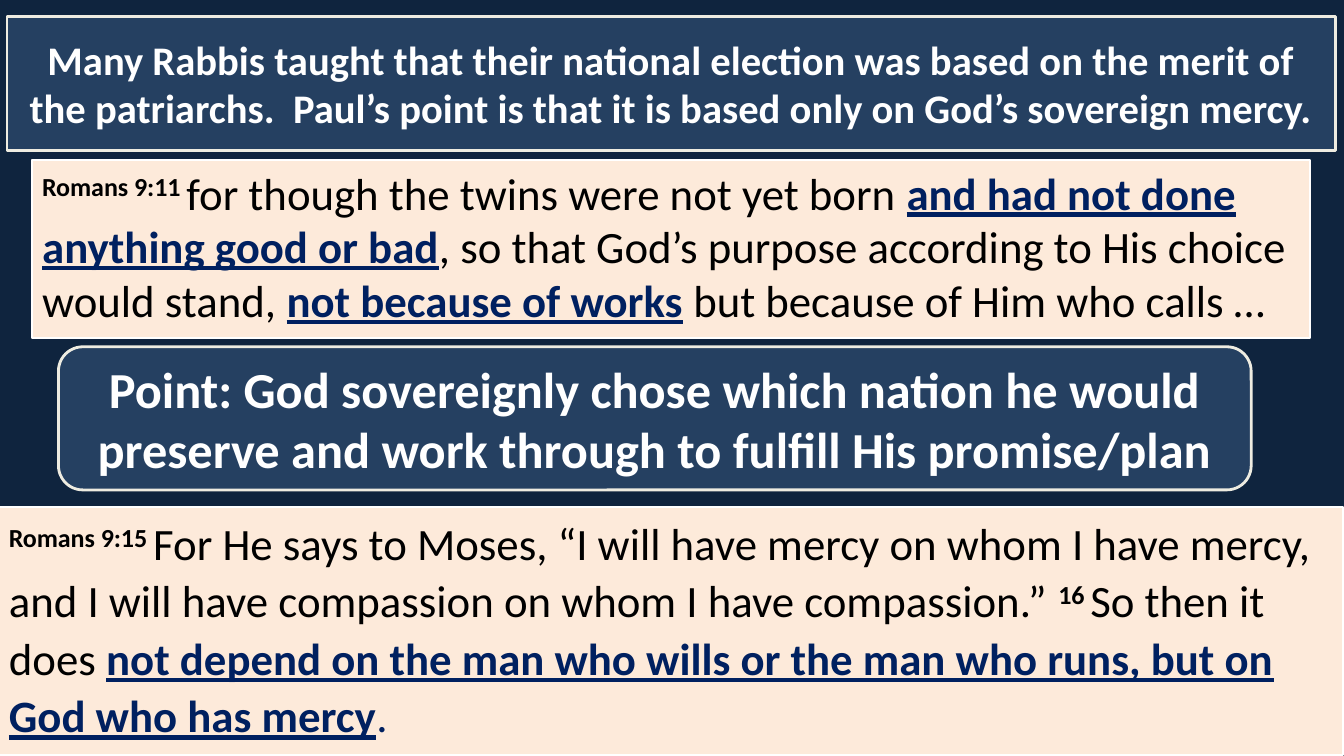
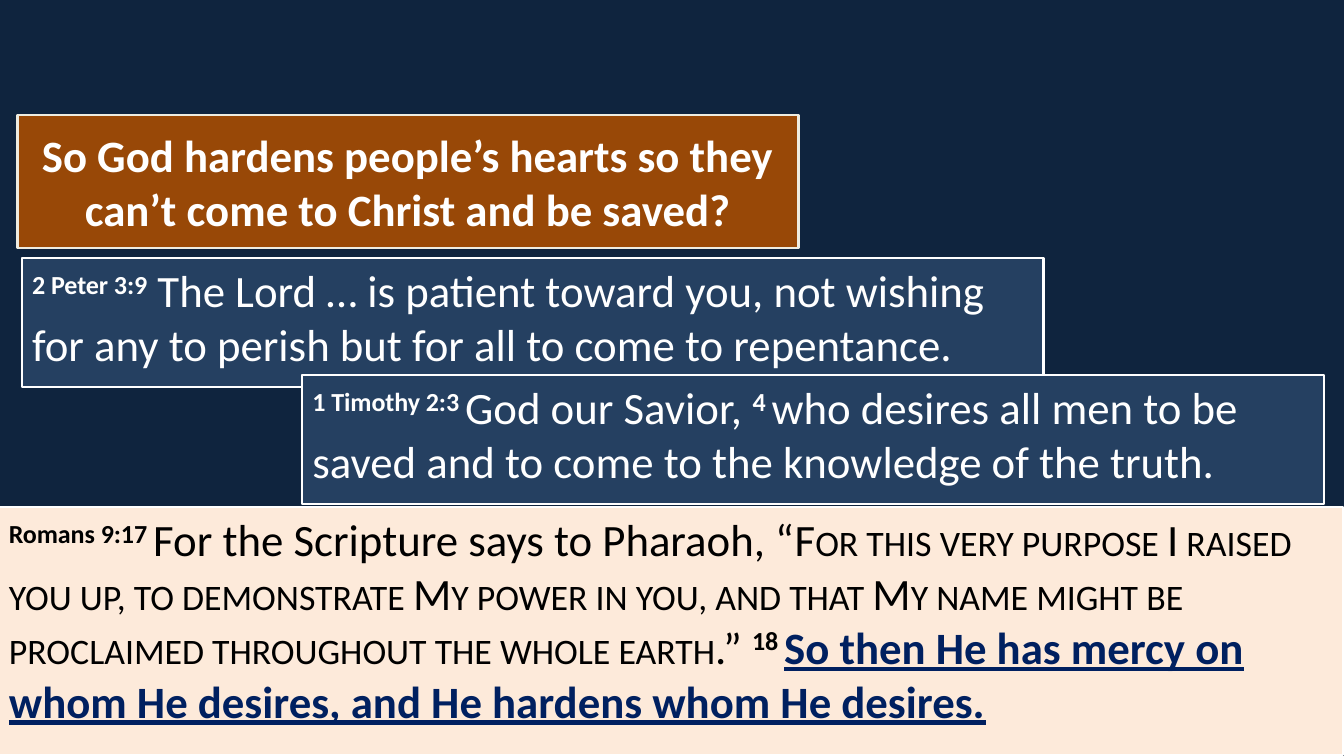
import pptx
import pptx.util
import pptx.dml.color
import pptx.enum.shapes
import pptx.enum.text
import pptx.oxml
import pptx.oxml.ns

COLORS = {
    "night": "0F243E", "navy": "254061", "rust": "984807", "peach": "FDEADA",
    "cream": "EEECE1", "white": "FFFFFF", "black": "000000", "stress": "002060",
}
FONT = "Calibri"
WIDTH, HEIGHT = 13.33, 7.5
VERSE_SIZE = 32
PASSAGE_BAND = (-0.01, 5.03, WIDTH, 2.46)
CALLOUT_GUIDES = {"adj1": -0.22, "adj2": 0.5, "adj3": 0.17}

SLIDES = [
    {
        "headline": {
            "box": (0.07, 0.16, 13.18, 1.33), "fill": "navy", "size": 29,
            "text": "Many Rabbis taught that their national election was based on the merit of "
                    "the patriarchs.  Paul’s point is that it is based only on God’s sovereign mercy.",
        },
        "points": [{
            "box": (0.58, 3.44, 11.83, 1.42), "fill": "navy", "size": 36,
            "text": "Point: God sovereignly chose which nation he would "
                    "preserve and work through to fulfill His promise/plan",
        }],
        "verses": [
            {
                "box": PASSAGE_BAND, "fill": "peach", "ink": "black",
                "line_spacing": 1.07, "space_after": 8,
                "runs": [
                    ("Romans 9:15 ", "ref"),
                    ("For He says to Moses, “I will have mercy on whom I have mercy, "
                     "and I will have compassion on whom I have compassion.” ", "plain"),
                    ("16 ", "ref"),
                    ("So then it does ", "plain"),
                    ("not depend on the man who wills or the man who runs, but "
                     "on God who has mercy", "stress"),
                    (".", "close"),
                ],
            },
            {
                "box": (0.32, 1.59, 12.67, 1.76), "fill": "peach", "ink": "black",
                "runs": [
                    ("Romans 9:11 ", "ref"),
                    ("for though the twins were not yet born ", "plain"),
                    ("and had not done anything good or bad", "stress"),
                    (", so that God’s purpose according to His choice would stand, ", "plain"),
                    ("not because of works", "stress"),
                    (" but because of Him who calls …", "plain"),
                ],
            },
        ],
    },
    {
        "headline": {
            "box": (0.17, 1.14, 7.75, 1.32), "fill": "rust", "size": 32,
            "text": "So God hardens people’s hearts so they can’t come to Christ and be saved?",
        },
        "points": [],
        "verses": [
            {
                "box": PASSAGE_BAND, "fill": "peach", "ink": "black",
                "runs": [
                    ("Romans 9:17 ", "ref"),
                    ("For the Scripture says to Pharaoh, “", "plain"),
                    ("For this very purpose I raised you up, to demonstrate My power in you, "
                     "and that My name might be proclaimed throughout the whole earth", "small"),
                    (".” ", "plain"),
                    ("18 ", "ref"),
                    ("So then He has mercy on whom He desires, "
                     "and He hardens whom He desires.", "stress"),
                ],
            },
            {
                "box": (0.22, 2.56, 10.13, 1.28), "fill": "navy", "ink": "white",
                "runs": [
                    ("2 Peter 3:9", "ref"),
                    (" The Lord … is patient toward you, not wishing "
                     "for any to perish but for all to come to repentance.", "plain"),
                ],
            },
            {
                "box": (3, 3.72, 10.13, 1.28), "fill": "navy", "ink": "white",
                "runs": [
                    ("1 Timothy 2:3 ", "ref"),
                    ("God our Savior, ", "plain"),
                    ("4 ", "ref"),
                    ("who desires all men to be saved and to come to the knowledge of the truth.",
                     "plain"),
                ],
            },
        ],
    },
]


def rgb(name):
    return pptx.dml.color.RGBColor.from_string(COLORS[name])


def inches(box):
    return [pptx.util.Inches(length) for length in box]


def paint(shape, fill, border, weight):
    shape.shadow.inherit = False
    shape.fill.solid()
    shape.fill.fore_color.rgb = rgb(fill)
    shape.line.color.rgb = rgb(border)
    shape.line.width = pptx.util.Pt(weight)


def frame_text(shape, anchor, align):
    frame = shape.text_frame
    frame.word_wrap = True
    frame.auto_size = pptx.enum.text.MSO_AUTO_SIZE.NONE
    frame.vertical_anchor = anchor
    paragraph = frame.paragraphs[0]
    paragraph.alignment = align
    return paragraph


def add_run(paragraph, text, size, ink, style):
    run = paragraph.add_run()
    run.text = text
    font = run.font
    font.name = FONT
    font.size = pptx.util.Pt(size)
    font.bold = style in ("ref", "stress", "callout")
    font.underline = style == "stress"
    font.color.rgb = rgb("stress" if style in ("stress", "close") else ink)
    properties = run._r.get_or_add_rPr()
    if style == "ref":
        properties.set("baseline", "30000")
    if style == "small":
        properties.set("cap", "small")


def fill_callout(shape, callout):
    paint(shape, callout["fill"], "cream", 2)
    paragraph = frame_text(shape, pptx.enum.text.MSO_ANCHOR.MIDDLE, pptx.enum.text.PP_ALIGN.CENTER)
    add_run(paragraph, callout["text"], callout["size"], "white", "callout")


def add_headline(slide, headline):
    title = slide.shapes.title
    title.left, title.top, title.width, title.height = inches(headline["box"])
    guides = "".join(
        f'<a:gd name="{name}" fmla="val {round(share * 100000)}"/>'
        for name, share in CALLOUT_GUIDES.items())
    title._element.spPr.append(pptx.oxml.parse_xml(
        f'<a:prstGeom {pptx.oxml.ns.nsdecls("a")} prst="wedgeRoundRectCallout">'
        f'<a:avLst>{guides}</a:avLst></a:prstGeom>'))
    fill_callout(title, headline)


def add_point(slide, point):
    shape = slide.shapes.add_shape(
        pptx.enum.shapes.MSO_SHAPE.ROUNDED_RECTANGULAR_CALLOUT, *inches(point["box"]))
    for index, share in enumerate(CALLOUT_GUIDES.values()):
        shape.adjustments[index] = share
    fill_callout(shape, point)


def add_verse(slide, verse):
    panel = slide.shapes.add_shape(pptx.enum.shapes.MSO_SHAPE.RECTANGLE, *inches(verse["box"]))
    paint(panel, verse["fill"], "white", 1.5)
    paragraph = frame_text(panel, pptx.enum.text.MSO_ANCHOR.TOP, pptx.enum.text.PP_ALIGN.LEFT)
    paragraph.line_spacing = verse.get("line_spacing", 1.0)
    paragraph.space_after = pptx.util.Pt(verse.get("space_after", 0))
    for text, style in verse["runs"]:
        add_run(paragraph, text, VERSE_SIZE, verse["ink"], style)


def main():
    deck = pptx.Presentation()
    deck.slide_width, deck.slide_height = inches((WIDTH, HEIGHT))
    title_only = deck.slide_layouts[5]
    background = deck.slide_master.background.fill
    background.solid()
    background.fore_color.rgb = rgb("night")
    for content in SLIDES:
        slide = deck.slides.add_slide(title_only)
        add_headline(slide, content["headline"])
        for verse in content["verses"]:
            add_verse(slide, verse)
        for point in content["points"]:
            add_point(slide, point)
    deck.save("out.pptx")


if __name__ == "__main__":
    main()
